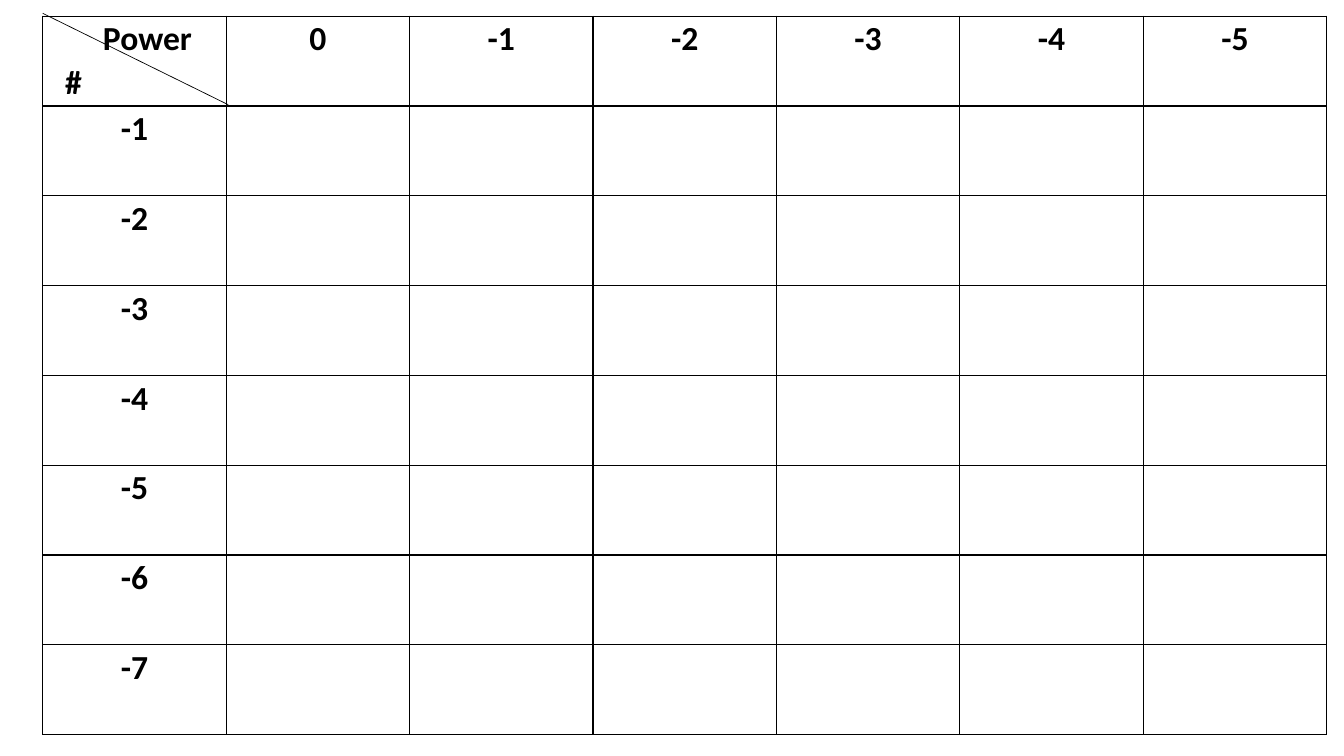
"""Build a blank worksheet table of powers of negative numbers."""
from lxml import etree
from pptx import Presentation
from pptx.dml.color import RGBColor
from pptx.enum import shapes, text
from pptx.oxml import ns
from pptx.util import Pt

POWERS = ["0", "-1", "-2", "-3", "-4", "-5"]
NUMBERS = ["-1", "-2", "-3", "-4", "-5", "-6", "-7"]
CORNER = [("Power", 38), ("#", 11)]

BLACK = RGBColor(0, 0, 0)
FONT, FONT_SIZE, LINE_SPACING = "Calibri", 24, 1.07
LEFT, TOP = 30.5, 11.5
COLUMN_WIDTH, ROW_HEIGHT = 131.04, 64.17
SIDE_MARGIN = 5.04
BORDER_WIDTH, DIAGONAL_WIDTH = 1, 0.5
DIAGONAL = (30.5, 9.5, 163, 74.8)


def set_borders(cell):
    properties = cell._tc.get_or_add_tcPr()
    for side in ("lnL", "lnR", "lnT", "lnB"):
        line = etree.SubElement(properties, ns.qn("a:" + side), w=str(Pt(BORDER_WIDTH)))
        fill = etree.SubElement(line, ns.qn("a:solidFill"))
        etree.SubElement(fill, ns.qn("a:srgbClr"), val=str(BLACK))


def write(paragraph, words, alignment):
    paragraph.alignment = alignment
    paragraph.line_spacing = LINE_SPACING
    run = paragraph.add_run()
    run.text = words
    run.font.name = FONT
    run.font.size = Pt(FONT_SIZE)
    run.font.bold = True
    run.font.color.rgb = BLACK


def add_power_table(slide):
    rows, columns = len(NUMBERS) + 1, len(POWERS) + 1
    frame = slide.shapes.add_table(rows, columns, Pt(LEFT), Pt(TOP),
                                   Pt(columns * COLUMN_WIDTH), Pt(rows * ROW_HEIGHT))
    table = frame.table
    table.first_row = table.horz_banding = False
    for column in table.columns:
        column.width = Pt(COLUMN_WIDTH)
    for row in table.rows:
        row.height = Pt(ROW_HEIGHT)
    for cell in table.iter_cells():
        cell.margin_left = cell.margin_right = Pt(SIDE_MARGIN)
        cell.margin_top = cell.margin_bottom = 0
        set_borders(cell)
        cell.fill.background()

    headings = [(0, column, power) for column, power in enumerate(POWERS, 1)]
    headings += [(row, 0, number) for row, number in enumerate(NUMBERS, 1)]
    for row, column, words in headings:
        paragraph = table.cell(row, column).text_frame.paragraphs[0]
        write(paragraph, words, text.PP_ALIGN.CENTER)

    corner = table.cell(0, 0).text_frame
    for index, (words, indent) in enumerate(CORNER):
        paragraph = corner.add_paragraph() if index else corner.paragraphs[0]
        write(paragraph, words, text.PP_ALIGN.LEFT)
        paragraph._p.get_or_add_pPr().set("marL", str(Pt(indent)))


def add_diagonal(slide):
    connector = slide.shapes.add_connector(shapes.MSO_CONNECTOR.STRAIGHT,
                                           *[Pt(value) for value in DIAGONAL])
    connector.line.color.rgb = BLACK
    connector.line.width = Pt(DIAGONAL_WIDTH)
    etree.SubElement(connector._element.spPr, ns.qn("a:effectLst"))


def main():
    presentation = Presentation()
    presentation.slide_width, presentation.slide_height = Pt(960), Pt(540)
    slide = presentation.slides.add_slide(presentation.slide_layouts[6])
    add_power_table(slide)
    add_diagonal(slide)
    presentation.save("out.pptx")


if __name__ == "__main__":
    main()
